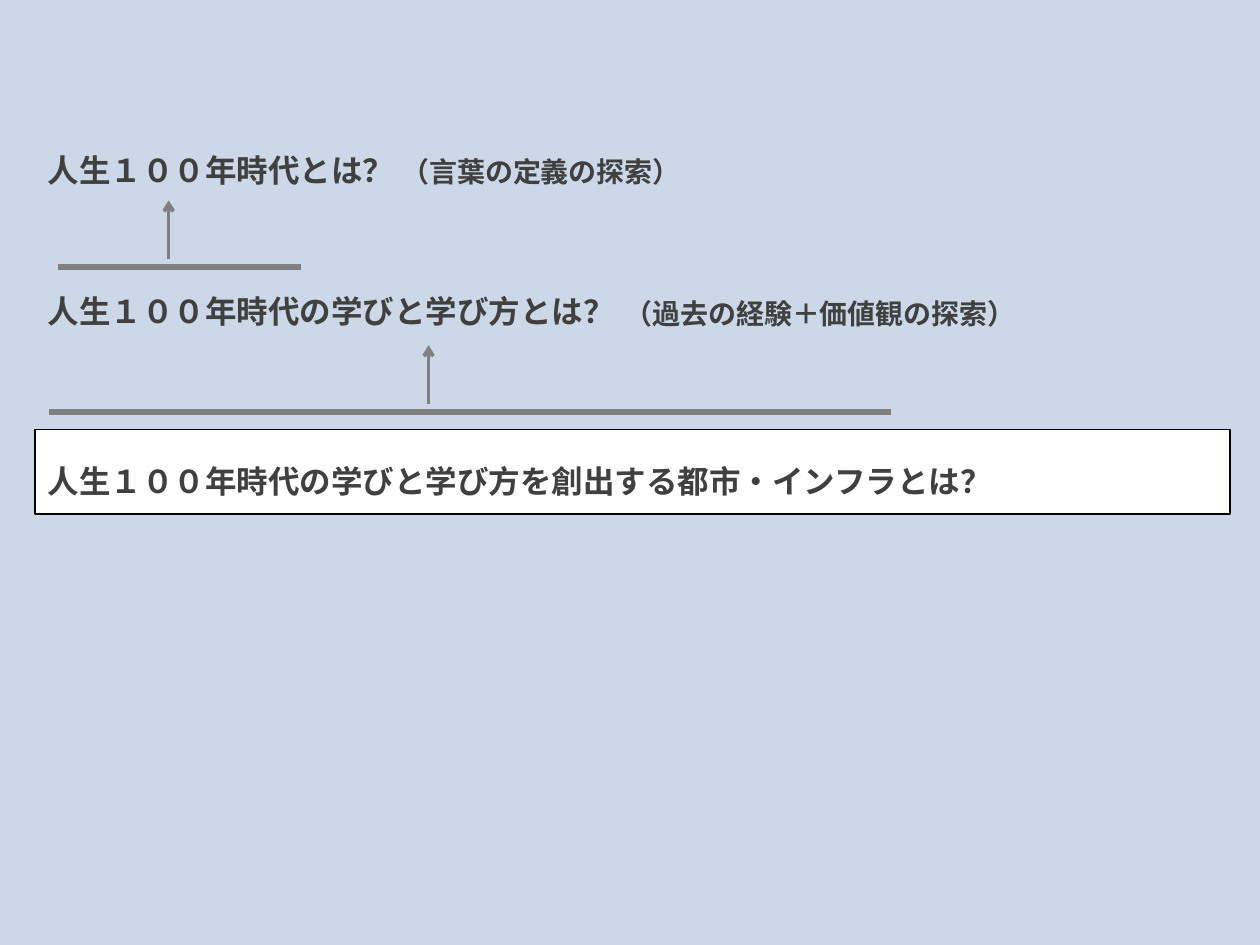
from dataclasses import dataclass

from lxml.etree import SubElement
from pptx import Presentation
from pptx.dml.color import RGBColor
from pptx.enum.shapes import MSO_CONNECTOR
from pptx.enum.text import MSO_ANCHOR, MSO_AUTO_SIZE, PP_ALIGN
from pptx.oxml.ns import qn
from pptx.util import Cm, Pt


@dataclass(frozen=True)
class Theme:
    background: RGBColor = RGBColor(0xCC, 0xD8, 0xE7)
    panel: RGBColor = RGBColor(0xFF, 0xFF, 0xFF)
    border: RGBColor = RGBColor(0x00, 0x00, 0x00)
    text: RGBColor = RGBColor(0x40, 0x40, 0x40)
    rule: RGBColor = RGBColor(0x80, 0x80, 0x80)
    font: str = "Noto Sans CJK JP"
    question_size: Pt = Pt(18)
    note_size: Pt = Pt(16)
    leading: Pt = Pt(32)
    rule_width: Pt = Pt(3.5)
    arrow_width: Pt = Pt(2)
    border_width: Pt = Pt(1)


theme = Theme()


def write_line(box, text, size, align):
    """Fill a box with one bold, vertically centred paragraph."""
    frame = box.text_frame
    frame.text = text
    frame.word_wrap = True
    frame.auto_size = MSO_AUTO_SIZE.NONE
    frame.vertical_anchor = MSO_ANCHOR.MIDDLE
    paragraph = frame.paragraphs[0]
    paragraph.alignment = align
    paragraph.line_spacing = theme.leading
    paragraph.space_before = Pt(0)
    font = paragraph.runs[0].font
    font.size = size
    font.bold = True
    font.color.rgb = theme.text
    font.name = theme.font
    SubElement(paragraph.runs[0].font._element, qn("a:ea"), typeface=theme.font)


def draw_line(x1, y1, x2, y2, width):
    line = slide.shapes.add_connector(
        MSO_CONNECTOR.STRAIGHT, Cm(x1), Cm(y1), Cm(x2), Cm(y2))
    line.line.color.rgb = theme.rule
    line.line.width = width
    SubElement(line._element.spPr, qn("a:effectLst"))
    return line


prs = Presentation()
prs.slide_width, prs.slide_height = Cm(25.4), Cm(19.05)
slide = prs.slides.add_slide(prs.slide_layouts[5])
slide.background.fill.solid()
slide.background.fill.fore_color.rgb = theme.background

LEFT, WIDTH, HEIGHT = 0.71, 24.08, 1.7
NOTE_HEIGHT = 1.22
ARROW_LENGTH = 1.19

# Main question
title = slide.shapes.title
title.left, title.top, title.width, title.height = Cm(LEFT), Cm(8.66), Cm(WIDTH), Cm(HEIGHT)
title.fill.solid()
title.fill.fore_color.rgb = theme.panel
title.line.color.rgb = theme.border
title.line.width = theme.border_width
write_line(title, "人生１００年時代の学びと学び方を創出する都市・インフラとは？",
           theme.question_size, PP_ALIGN.LEFT)

# Underlying questions: text, top
questions = [
    ("人生１００年時代の学びと学び方とは？", 5.23),
    ("人生１００年時代とは？", 2.39),
]
for text, top in questions:
    question = slide.shapes.add_textbox(Cm(LEFT), Cm(top), Cm(WIDTH), Cm(HEIGHT))
    write_line(question, text, theme.question_size, PP_ALIGN.LEFT)

# Each rule marks a phrase, and its arrow leads to the question above:
# rule start, rule end, rule y, arrow x, arrow start y
links = [
    (0.99, 17.96, 8.31, 8.64, 8.15),
    (1.17, 6.07, 5.38, 3.4, 5.23),
]
for start, end, rule_y, arrow_x, arrow_y in links:
    draw_line(start, rule_y, end, rule_y, theme.rule_width)
    arrow = draw_line(arrow_x, arrow_y, arrow_x, arrow_y - ARROW_LENGTH, theme.arrow_width)
    SubElement(arrow.line._get_or_add_ln(), qn("a:tailEnd"), type="arrow")

# Notes beside the questions: text, left, top, width
notes = [
    ("（過去の経験＋価値観の探索）", 11.76, 5.49, 9.55),
    ("（言葉の定義の探索）", 7.19, 2.62, 7.44),
]
for text, left, top, width in notes:
    note = slide.shapes.add_textbox(Cm(left), Cm(top), Cm(width), Cm(NOTE_HEIGHT))
    write_line(note, text, theme.note_size, PP_ALIGN.CENTER)

prs.save("out.pptx")
